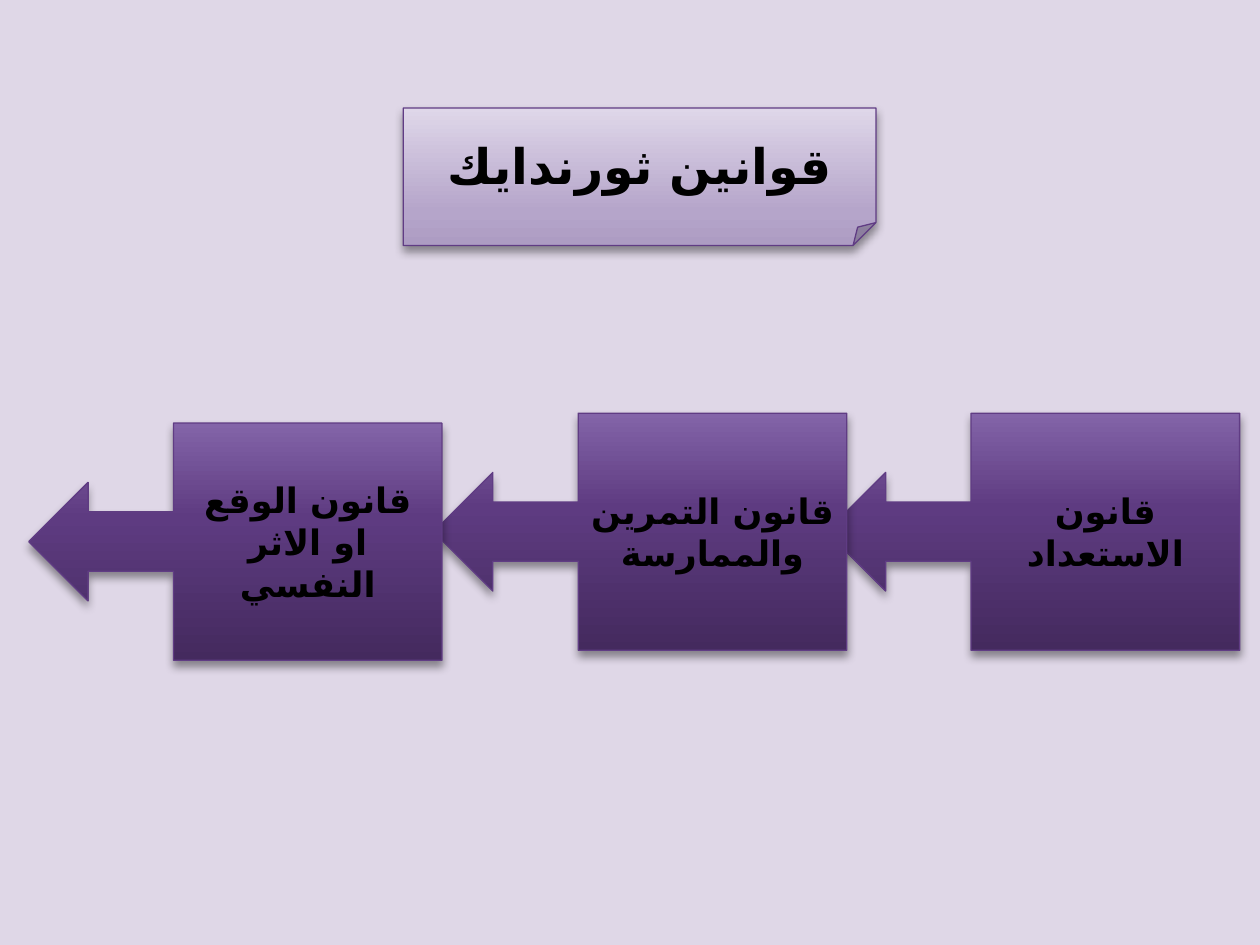
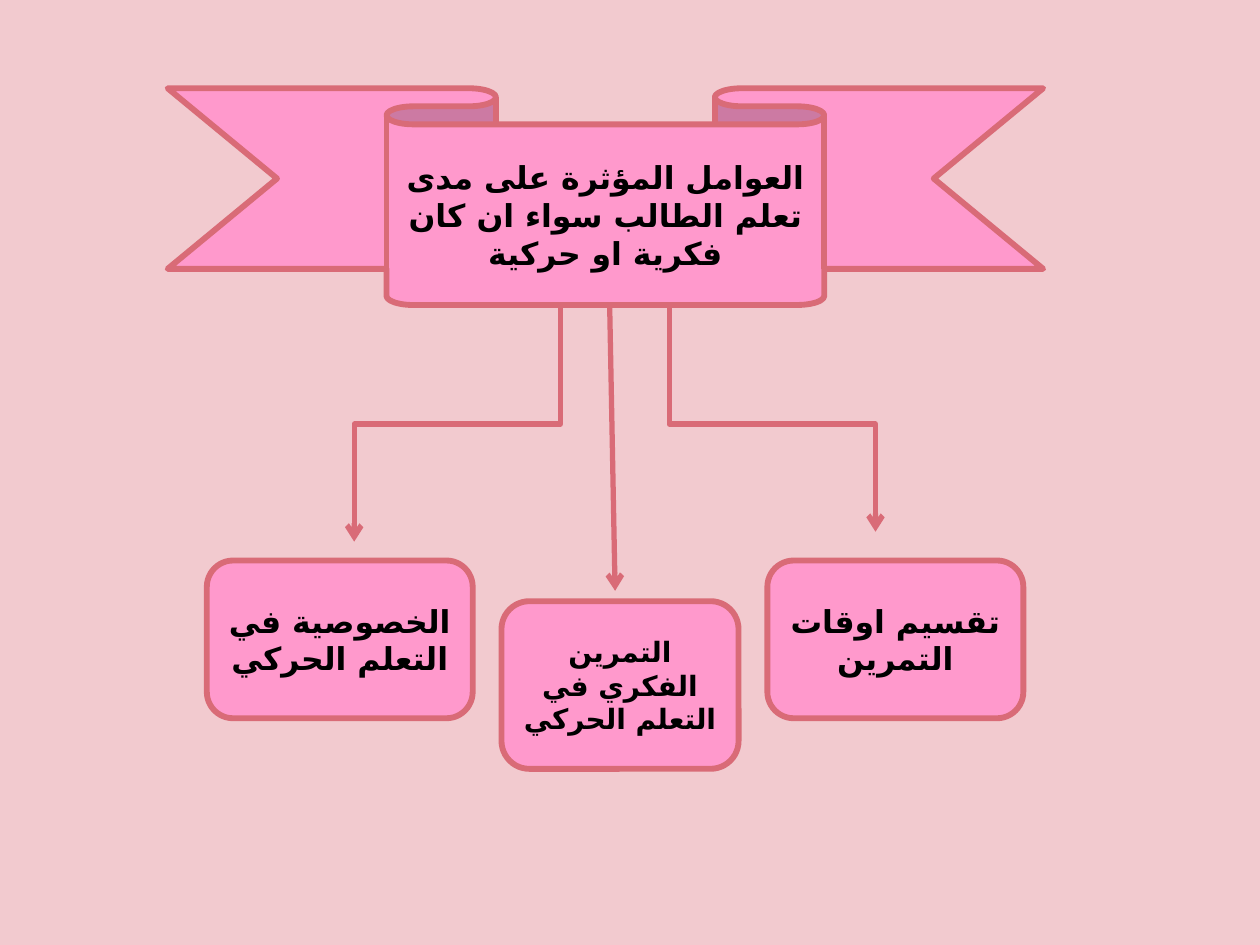
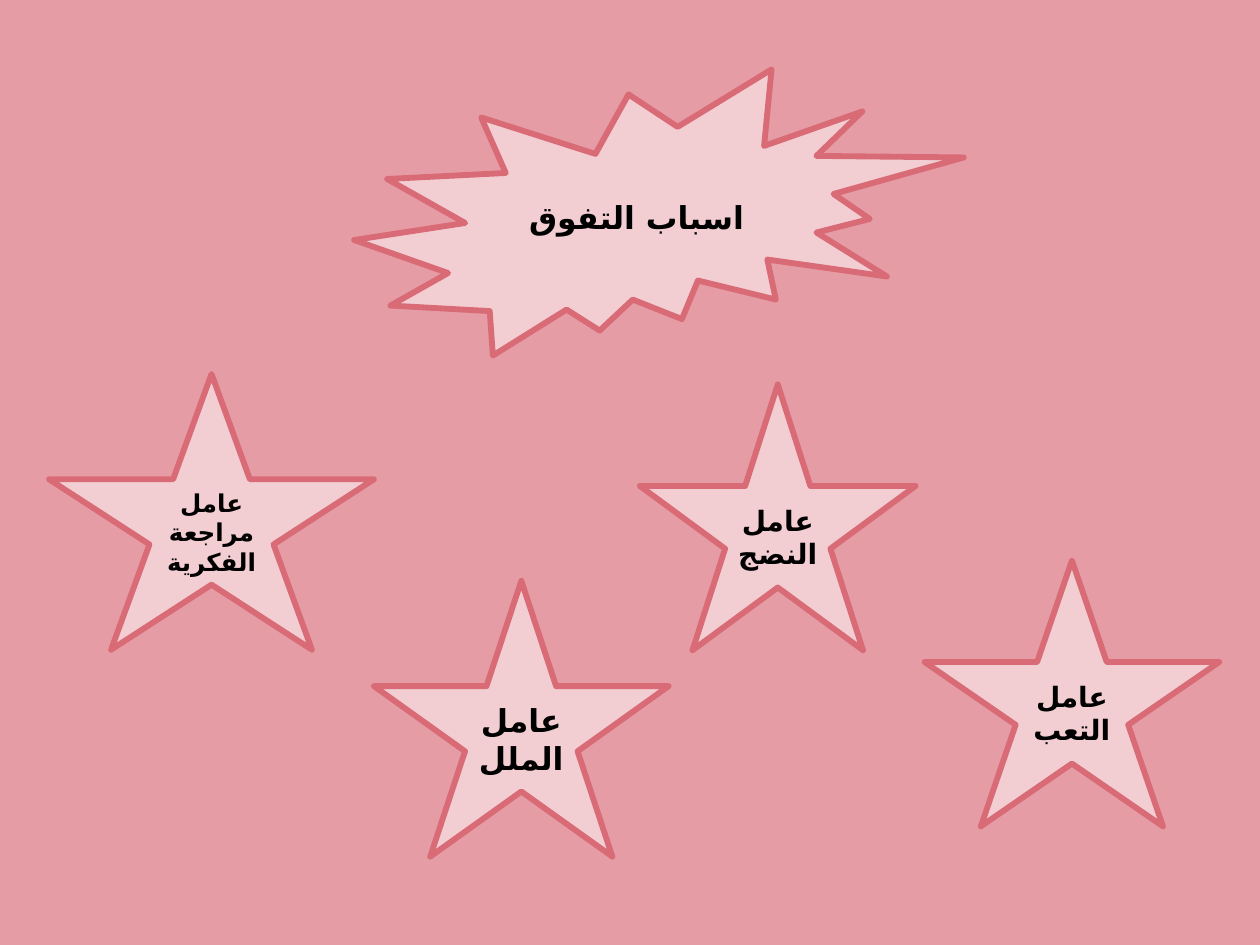
from dataclasses import dataclass

from lxml import etree
from pptx import Presentation
from pptx import util as u
from pptx.dml.color import RGBColor
from pptx.enum import shapes, text
from pptx.oxml.ns import qn

FONT = "DejaVu Sans"
HUES = {
    "ink": "000000",
    "lilac": "DFD7E7",
    "plum": "603C84",
    "blush": "F2CACF",
    "rose": "E69CA4",
    "coral": "D96B77",
    "pink": "FF99CC",
    "pale": "F2CED2",
}
# Gradient stops run from the bottom of the shape to its top
FADES = {
    "mist": [(0, "AD9CC3"), (25, "B5A5CA"), (100, "DFD7E9")],
    "grape": [(0, "442A5E"), (60, "5E3B81"), (100, "8364A8")],
}
KIND = shapes.MSO_SHAPE


@dataclass
class Box:
    kind: KIND
    words: str
    size: int
    left: float
    top: float
    width: float
    height: float


@dataclass
class Look:
    fill: str
    line: str
    weight: float


@dataclass
class Link:
    x1: float
    y1: float
    x2: float
    y2: float
    bend: float = 0  # height of the level part, 0 for a straight line


MIST = Look("mist", "plum", 0.75)
GRAPE = Look("grape", "plum", 0.75)
PINK = Look("pink", "coral", 3.35)
PALE = Look("pale", "coral", 3.35)

# Slide 1: laws in a row
LAW_HEAD = Box(KIND.FOLDED_CORNER, "قوانين ثورندايك", 28, 8.13, 2.18, 9.53, 2.77)
LAWS = [
    Box(KIND.LEFT_ARROW_CALLOUT, words, 20, left, top, 8.33, 4.78)
    for words, left, top in [
        ("قانون الاستعداد", 16.66, 8.33),
        ("قانون التمرين والممارسة", 8.74, 8.33),
        ("قانون الوقع او الاثر النفسي", 0.58, 8.53),
    ]
]

# Slide 2: factors under a ribbon
RIBBON = Box(
    KIND.DOWN_RIBBON,
    "العوامل المؤثرة على مدى تعلم الطالب سواء ان كان فكرية او حركية",
    18, 3.38, 1.78, 17.65, 4.37,
)
LINKS = [
    Link(13.49, 6.15, 17.65, 10.72, 8.55),
    Link(11.3, 6.15, 7.14, 10.92, 8.55),
    Link(12.29, 6.15, 12.4, 11.91),
]
PARTS = [
    Box(KIND.FLOWCHART_ALTERNATE_PROCESS, *rest)
    for rest in [
        ("تقسيم اوقات التمرين", 18, 15.47, 11.3, 5.16, 3.18),
        ("التمرين الفكري في التعلم الحركي", 16, 10.11, 12.12, 4.78, 3.38),
        ("الخصوصية في التعلم الحركي", 18, 4.17, 11.3, 5.36, 3.18),
    ]
]

# Slide 3: stars under a burst
BURST = Box(KIND.EXPLOSION2, "اسباب التفوق", 18, 7.14, 1.4, 12.29, 5.77)
STARS = [
    Box(KIND.STAR_5_POINT, *rest)
    for rest in [
        ("عامل التعب", 16, 18.64, 11.3, 5.94, 5.36),
        ("عامل مراجعة الفكرية", 14, 0.99, 7.54, 6.55, 5.56),
        ("عامل الملل", 18, 7.54, 11.71, 5.94, 5.56),
        ("عامل النضج", 16, 12.9, 7.75, 5.56, 5.36),
    ]
]


def hue(name: str) -> RGBColor:
    return RGBColor.from_string(HUES[name])


def add_tag(parent, tag: str, **attrs):
    return etree.SubElement(parent, qn(tag), {k: str(v) for k, v in attrs.items()})


def add_page(deck, back: str):
    page = deck.slides.add_slide(deck.slide_layouts[6])
    fill = page.background.fill
    fill.solid()
    fill.fore_color.rgb = hue(back)
    return page


def fade(shape, stops: list) -> None:
    """Fill with a vertical gradient and drop a soft shadow."""
    shape.fill.gradient()
    shape.fill.gradient_angle = 90
    props = shape._element.spPr
    row = props.find(".//" + qn("a:gsLst"))
    for old in list(row):
        row.remove(old)
    for place, code in stops:
        add_tag(add_tag(row, "a:gs", pos=place * 1000), "a:srgbClr", val=code)
    glow = add_tag(
        props.find(qn("a:effectLst")), "a:outerShdw",
        blurRad=u.Pt(5.2), dist=u.Pt(3), dir=5400000, rotWithShape=0,
    )
    shade = add_tag(glow, "a:srgbClr", val=HUES["ink"])
    add_tag(shade, "a:alpha", val=40000)


def set_words(shape, box: Box) -> None:
    frame = shape.text_frame
    frame.text = box.words
    frame.word_wrap = True
    frame.vertical_anchor = text.MSO_ANCHOR.MIDDLE
    para = frame.paragraphs[0]
    para.alignment = text.PP_ALIGN.CENTER
    para._p.get_or_add_pPr().set("rtl", "1")
    for run in para.runs:
        font = run.font
        font.size, font.bold, font.name = u.Pt(box.size), True, FONT
        font.color.rgb = hue("ink")
        add_tag(run._r.get_or_add_rPr(), "a:cs", typeface=FONT)


def draw_box(page, box: Box, look: Look) -> None:
    sides = (box.left, box.top, box.width, box.height)
    shape = page.shapes.add_shape(box.kind, *map(u.Cm, sides))
    shape.line.color.rgb = hue(look.line)
    shape.line.width = u.Pt(look.weight)
    shape.shadow.inherit = False
    if look.fill in FADES:
        fade(shape, FADES[look.fill])
    else:
        shape.fill.solid()
        shape.fill.fore_color.rgb = hue(look.fill)
        add_tag(shape.line._get_or_add_ln(), "a:round")
    set_words(shape, box)


def draw_link(page, link: Link) -> None:
    kind = shapes.MSO_CONNECTOR.STRAIGHT
    ends = (link.x1, link.y1, link.x2, link.y2)
    if link.bend:
        # A downward elbow is a level one turned about its centre
        kind = shapes.MSO_CONNECTOR.ELBOW
        mid_x, mid_y = (link.x1 + link.x2) / 2, (link.y1 + link.y2) / 2
        half_w, half_h = (link.y2 - link.y1) / 2, abs(link.x2 - link.x1) / 2
        ends = (mid_x - half_w, mid_y - half_h, mid_x + half_w, mid_y + half_h)
    wire = page.shapes.add_connector(kind, *map(u.Cm, ends))
    props = wire._element.spPr
    if link.bend:
        right = link.x2 > link.x1
        frame = props.find(qn("a:xfrm"))
        frame.set("rot", str((270 if right else 90) * 60000))
        if right:
            frame.set("flipH", "1")
        share = (link.bend - link.y1) / (link.y2 - link.y1)
        guides = props.find(".//" + qn("a:avLst"))
        add_tag(guides, "a:gd", name="adj1", fmla=f"val {round(share * 100000)}")
    wire.line.color.rgb = hue("coral")
    wire.line.width = u.Pt(3)
    line = wire.line._get_or_add_ln()
    add_tag(line, "a:round")
    add_tag(line, "a:tailEnd", type="arrow")
    add_tag(props, "a:effectLst")


def main() -> None:
    deck = Presentation()
    deck.slide_width, deck.slide_height = u.Cm(25.4), u.Cm(19.05)

    # Each page: ground, heading, links, then the boxes below
    pages = [
        ("lilac", LAW_HEAD, MIST, [], LAWS, GRAPE),
        ("blush", RIBBON, PINK, LINKS, PARTS, PINK),
        ("rose", BURST, PALE, [], STARS, PALE),
    ]
    for back, head, head_look, links, boxes, look in pages:
        page = add_page(deck, back)
        draw_box(page, head, head_look)
        for link in links:
            draw_link(page, link)
        for box in boxes:
            draw_box(page, box, look)

    deck.save("out.pptx")


if __name__ == "__main__":
    main()
